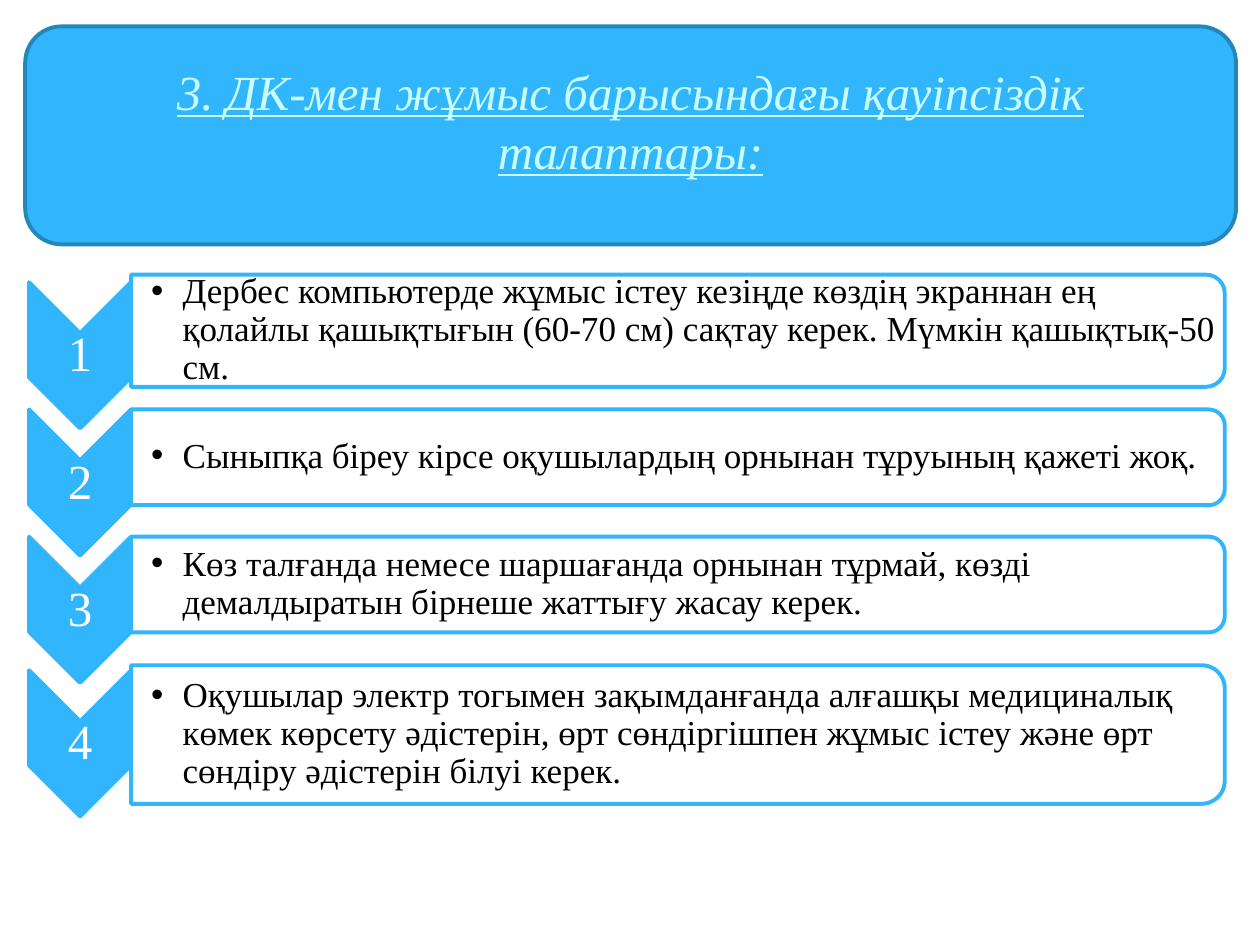
from pptx import Presentation, util as u
from pptx.dml.color import RGBColor
from pptx.enum import shapes, text
from lxml import etree

HUES = {"blue": "31B6FD", "edge": "2487BB", "pale": "C8FEFD",
        "white": "FFFFFF", "black": "000000"}
FONT = "Times New Roman"
KIND = shapes.MSO_SHAPE
LEFT, SPLIT, RIGHT = 0.23, 1.04, 9.72
STEP = 1.01
# chevron top, panel top, panel height, wording
ROWS = [
    (2.24, 2.18, 0.89, "Дербес компьютерде жұмыс істеу кезіңде көздің экраннан ең "
     "қолайлы қашықтығын (60-70 см) сақтау керек. Мүмкін қашықтық-50 см."),
    (2.24 + STEP, 3.25, 0.76,
     "Сыныпқа біреу кірсе оқушылардың орнынан тұруының қажеті жоқ."),
    (2.24 + 2 * STEP, 3.25 + STEP, 0.76, "Көз талғанда немесе шаршағанда орнынан "
     "тұрмай, көзді демалдыратын бірнеше жаттығу жасау керек."),
    (5.32, 5.28, 1.10, "Оқушылар электр тогымен зақымданғанда алғашқы медициналық "
     "көмек көрсету әдістерін, өрт сөндіргішпен жұмыс істеу және өрт сөндіру "
     "әдістерін білуі керек."),
]


def hue(name):
    return RGBColor.from_string(HUES[name])


def inches(*box):
    return [u.Inches(v) for v in box]


def shape(slide, kind, box, fill, edge, turned=False):
    """Draw a preset; a turned one fills the box after a quarter turn."""
    x, y, w, h = box
    if turned:
        x, y, w, h = x + (w - h) / 2, y + (h - w) / 2, h, w
    item = slide.shapes.add_shape(kind, *inches(x, y, w, h))
    item.rotation = 90 if turned else 0
    item.shadow.inherit = False
    item.fill.solid()
    item.fill.fore_color.rgb = hue(fill)
    item.line.color.rgb = hue(edge)
    item.line.width = u.Pt(2.25)
    return item


def style(font, size, color, **form):
    font.size, font.color.rgb = u.Pt(size), hue(color)
    for key, value in {"name": FONT, **form}.items():
        setattr(font, key, value)


def label(slide, box, words, size, color, pads):
    """Add middle-anchored text with left, top, right and bottom pads."""
    item = slide.shapes.add_textbox(*inches(*box))
    frame = item.text_frame
    frame.word_wrap = True
    frame.vertical_anchor = text.MSO_ANCHOR.MIDDLE
    for side, pad in zip(("left", "top", "right", "bottom"), pads):
        setattr(frame, "margin_" + side, u.Inches(pad))
    para = frame.paragraphs[0]
    para.line_spacing = 0.9
    run = para.add_run()
    run.text = words
    style(run.font, size, color)
    return para


def bullet(para):
    props = para._p.get_or_add_pPr()
    props.set("marL", str(u.Inches(0.25)))
    props.set("indent", str(-u.Inches(0.25)))
    space = props.nsmap["a"]
    etree.SubElement(props, f"{{{space}}}buFont", typeface="Arial")
    etree.SubElement(props, f"{{{space}}}buChar", char="•")


def header(slide, box):
    x, y, w, h = box
    panel = shape(slide, KIND.ROUNDED_RECTANGLE, box, "blue", "edge")
    slide.shapes._spTree.insert(2, panel._element)
    title = slide.shapes.title
    place = inches(x + 0.63, y + 0.23, w - 1.26, h * 0.6)
    for key, value in zip(("left", "top", "width", "height"), place):
        setattr(title, key, value)
    frame = title.text_frame
    frame.auto_size = text.MSO_AUTO_SIZE.NONE
    frame.vertical_anchor = text.MSO_ANCHOR.TOP
    para = frame.paragraphs[0]
    para.alignment = text.PP_ALIGN.CENTER
    run = para.add_run()
    run.text = "3. ДК-мен жұмыс барысындағы қауіпсіздік талаптары:"
    style(run.font, 28, "pale", italic=True, underline=True)


def rule(slide, num, mark, top, high, words):
    """Place a numbered chevron and its panel of text."""
    wide = SPLIT - LEFT
    shape(slide, KIND.CHEVRON, (LEFT, mark, wide, 1.16), "blue", "blue", True)
    para = label(slide, (LEFT, mark + 0.41, wide, 0.35), str(num), 28, "white",
                 [0.02] * 4)
    para.alignment = text.PP_ALIGN.CENTER
    shape(slide, KIND.ROUND_2_SAME_RECTANGLE, (SPLIT, top, RIGHT - SPLIT, high),
          "white", "blue", True)
    bullet(label(slide, (SPLIT, top + 0.04, RIGHT - SPLIT - 0.04, high - 0.09),
                 words, 20, "black", (0.16, 0.01, 0.01, 0.01)))


def main():
    deck = Presentation()
    deck.slide_width, deck.slide_height = inches(10, 7.5)
    slide = deck.slides.add_slide(deck.slide_layouts[5])
    header(slide, (0.2, 0.21, 9.61, 1.73))
    for num, row in enumerate(ROWS, 1):
        rule(slide, num, *row)
    deck.save("out.pptx")


if __name__ == "__main__":
    main()
